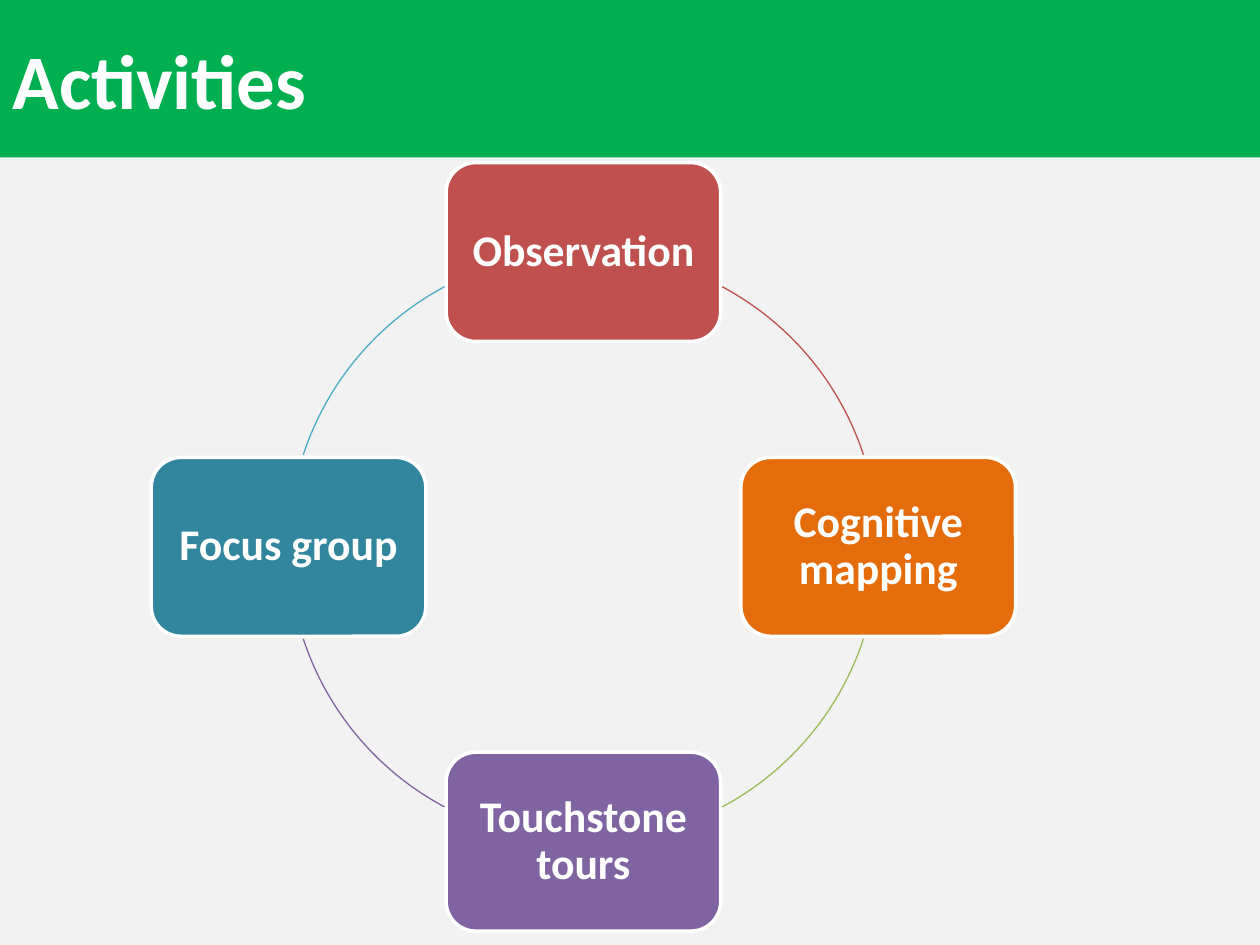
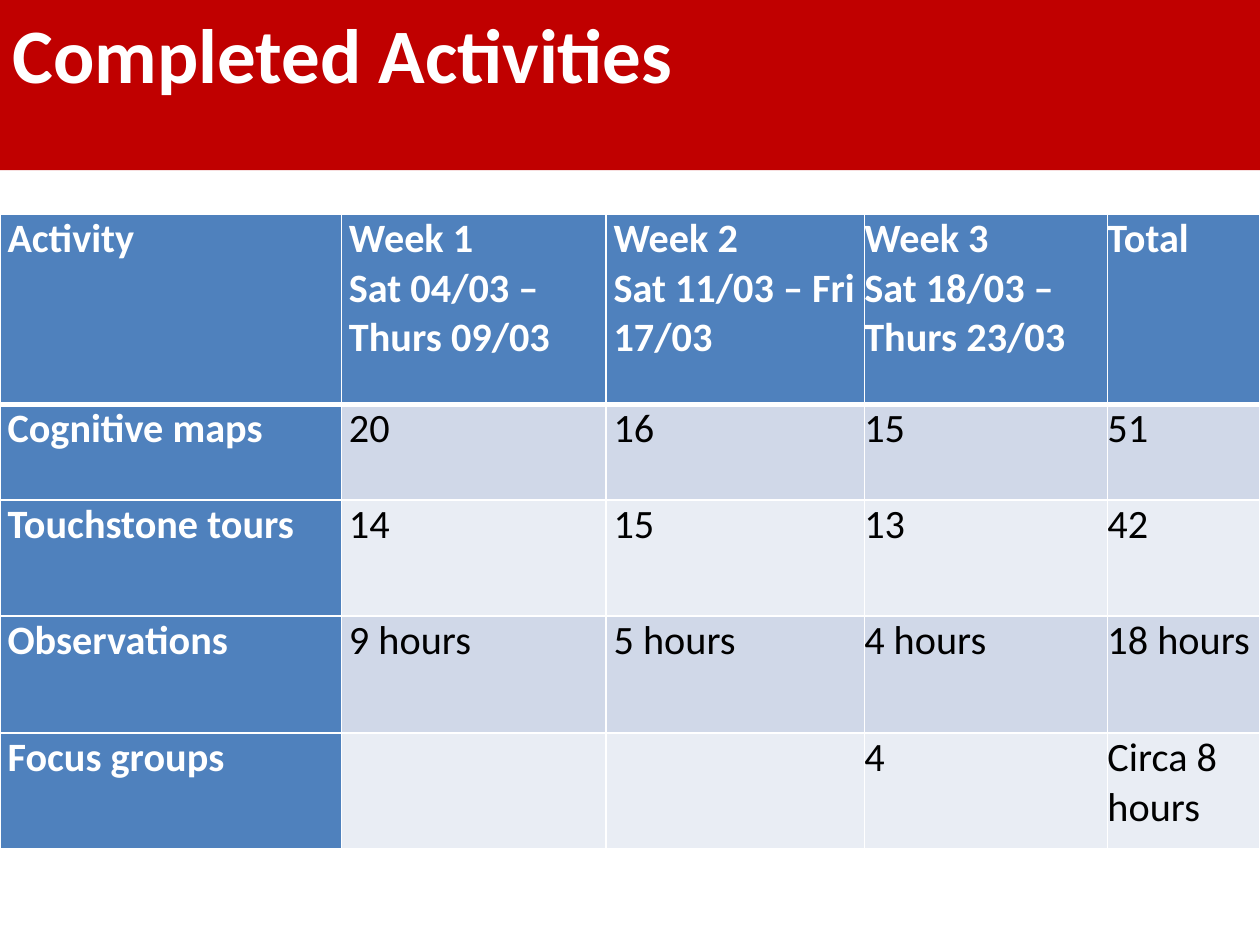
from lxml.etree import SubElement
from pptx import Presentation
from pptx.dml.color import RGBColor
from pptx.enum.shapes import MSO_SHAPE
from pptx.enum.text import MSO_ANCHOR, MSO_AUTO_SIZE, PP_ALIGN
from pptx.oxml.ns import qn
from pptx.util import Inches, Pt

W, H = Inches(10), Inches(7.5)
COLORS = {
    "white": "FFFFFF", "black": "000000", "pale": "F2F2F2",
    "green": "00B050", "darkred": "C00000",
    "red": "C0504D", "orange": "E46C0A", "lime": "9BBB59",
    "purple": "8064A2", "teal": "31859C", "aqua": "4BACC6",
    "blue": "4F81BD", "band1": "D0D8E8", "band2": "E9EDF4",
}
RGB = {name: RGBColor.from_string(value) for name, value in COLORS.items()}

prs = Presentation()
prs.slide_width, prs.slide_height = W, H


def style_text(tf, color, fmt, align=PP_ALIGN.LEFT, spacing=1.0):
    for p in tf.paragraphs:
        p.alignment, p.line_spacing = align, spacing
        for r in p.runs:
            r.font.color.rgb = RGB[color]
            for key, value in {"name": "Calibri", **fmt}.items():
                setattr(r.font, key, value)


def add_titled_slide(title, background, band, height, anchor):
    s = prs.slides.add_slide(prs.slide_layouts[5])
    s.background.fill.solid()
    s.background.fill.fore_color.rgb = RGB[background]
    sp = s.shapes.title
    box = {"left": 0, "top": 0, "width": W, "height": height}
    for key, value in box.items():
        setattr(sp, key, value)
    sp.fill.solid()
    sp.fill.fore_color.rgb = RGB[band]
    tf = sp.text_frame
    tf.text = title
    tf.auto_size, tf.vertical_anchor = MSO_AUTO_SIZE.NONE, anchor
    style_text(tf, "white", {"size": Pt(44), "bold": True})
    return s


s = add_titled_slide("Activities", "pale", "green", Inches(1.25), MSO_ANCHOR.MIDDLE)
cx, cy, radius = Inches(4.63), Inches(4.34), Inches(2.34)
node_w, node_h = Inches(2.18), Inches(1.42)
nodes = [
    ("Observation", "red", 0, -1),
    ("Cognitive mapping", "orange", 1, 0),
    ("Touchstone tours", "purple", 0, 1),
    ("Focus group", "teal", -1, 0),
]
for label, color, dx, dy in nodes:
    sp = s.shapes.add_shape(
        MSO_SHAPE.ROUNDED_RECTANGLE,
        cx + dx * radius - node_w // 2, cy + dy * radius - node_h // 2,
        node_w, node_h,
    )
    sp.shadow.inherit = False
    sp.fill.solid()
    sp.fill.fore_color.rgb = RGB[color]
    sp.line.color.rgb, sp.line.width = RGB["white"], Pt(2)
    tf = sp.text_frame
    tf.text = label
    tf.word_wrap, tf.vertical_anchor = True, MSO_ANCHOR.MIDDLE
    for side in ("left", "top", "right", "bottom"):
        setattr(tf, f"margin_{side}", Inches(0.1))
    style_text(tf, "white", {"size": Pt(25), "bold": True}, PP_ALIGN.CENTER, 0.9)

near_side, near_top = 18.2, 61.9
arcs = [
    ("red", 360 - near_top, 360 - near_side),
    ("lime", near_side, near_top),
    ("purple", 180 - near_top, 180 - near_side),
    ("aqua", 180 + near_side, 180 + near_top),
]
for color, start, end in arcs:
    sp = s.shapes.add_shape(MSO_SHAPE.ARC, cx - radius, cy - radius, 2 * radius, 2 * radius)
    sp.shadow.inherit = False
    sp.fill.background()
    sp.line.color.rgb, sp.line.width = RGB[color], Pt(0.75)
    for i, angle in enumerate((start, end)):
        sp.adjustments[i] = angle * 0.6

s = add_titled_slide("Completed Activities", "white", "darkred", Inches(1.35), MSO_ANCHOR.TOP)
rows = [
    ["Activity", "Week 1\vSat 04/03 –Thurs 09/03", "Week 2\nSat 11/03 – Fri 17/03",
     "Week 3\nSat 18/03 – Thurs 23/03", "Total"],
    ["Cognitive maps", "20", "16", "15", "51"],
    ["Touchstone tours", "14", "15", "13", "42"],
    ["Observations", "9 hours", "5 hours", "4 hours", "18 hours"],
    ["Focus groups", "", "", "4", "Circa 8 hours"],
]
col_widths = [2.71, 2.1, 2.05, 1.93, 1.21]
row_heights = [1.51, 0.76, 0.92, 0.93, 0.92]
table = s.shapes.add_table(
    len(rows), len(col_widths), 0, Inches(1.7), W, Inches(sum(row_heights))
).table
for col, width in zip(table.columns, col_widths):
    col.width = Inches(width)
for row, height in zip(table.rows, row_heights):
    row.height = Inches(height)

for i, row in enumerate(rows):
    for j, text in enumerate(row):
        cell = table.cell(i, j)
        heading = i == 0 or j == 0
        side = Inches(0.06 if j < 3 else 0)
        margins = {"margin_left": side, "margin_right": side, "margin_top": 0, "margin_bottom": 0}
        for key, value in margins.items():
            setattr(cell, key, value)
        borders = {"lnL": 1, "lnR": 1, "lnT": 3 if i == 1 else 1, "lnB": 3 if i == 0 else 1}
        for tag, width in borders.items():
            ln = SubElement(cell._tc.get_or_add_tcPr(), qn(f"a:{tag}"), w=str(Pt(width)))
            SubElement(SubElement(ln, qn("a:solidFill")), qn("a:srgbClr"), val=COLORS["white"])
        cell.fill.solid()
        cell.fill.fore_color.rgb = RGB["blue" if heading else "band1" if i % 2 else "band2"]
        cell.text = text
        style_text(cell.text_frame, "white" if heading else "black",
                   {"size": Pt(23), "bold": heading})

prs.save("out.pptx")
